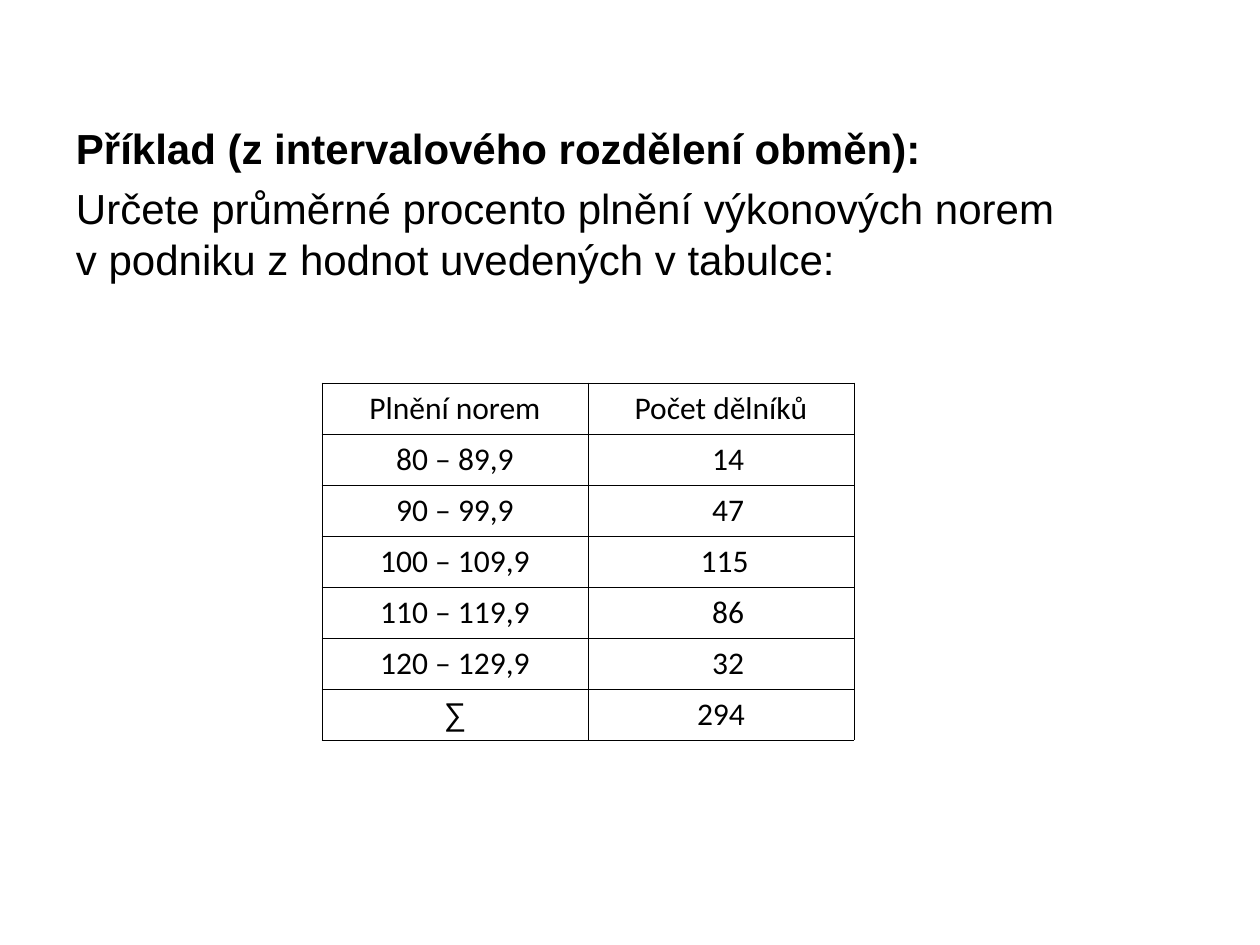
from lxml.etree import SubElement
from pptx import Presentation
from pptx.dml.color import RGBColor
from pptx.enum.text import MSO_ANCHOR, PP_ALIGN
from pptx.oxml.ns import qn
from pptx.util import Pt

# Content
HEADING = "Příklad (z intervalového rozdělení obměn):"
TASK = "Určete průměrné procento plnění výkonových norem\vv podniku z hodnot uvedených v tabulce:"
ROWS = [
    ("Plnění norem", "Počet dělníků"),
    ("80 – 89,9", "14"),
    ("90 – 99,9", "47"),
    ("100 – 109,9", "115"),
    ("110 – 119,9", "86"),
    ("120 – 129,9", "32"),
    ("∑", "294"),
]
COLORS = {"text": "000000", "border": "000000"}

# Geometry in px
SCALE = 914400 / 126
TEXT_BOX = (76, 122, 1108, 170)
TABLE_LEFT, TABLE_TOP, COL_W, ROW_H = 322, 383, 266, 51
DIGIT_SHIFT = 7  # extra left margin per digit missing from a count


def px(n):
    return round(n * SCALE)


def style(font, **values):
    for name, value in values.items():
        setattr(font, name, value)
    font.color.rgb = RGBColor.from_string(COLORS["text"])


def add_borders(cell):
    tc_pr = cell._tc.get_or_add_tcPr()
    for i, side in enumerate(("lnL", "lnR", "lnT", "lnB")):
        ln = SubElement(tc_pr, qn(f"a:{side}"), w=str(Pt(0.5)))
        fill = SubElement(ln, qn("a:solidFill"))
        SubElement(fill, qn("a:srgbClr"), val=COLORS["border"])
        tc_pr.insert(i, ln)


prs = Presentation()
prs.slide_width, prs.slide_height = px(1260), px(945)
s = prs.slides.add_slide(prs.slide_layouts[6])

# Heading and task
tf = s.shapes.add_textbox(*map(px, TEXT_BOX)).text_frame
tf.word_wrap = True
for side in ("left", "right", "top", "bottom"):
    setattr(tf, f"margin_{side}", 0)
for i, (text, bold) in enumerate([(HEADING, True), (TASK, False)]):
    p = tf.add_paragraph() if i else tf.paragraphs[0]
    p.text = text
    p.line_spacing = Pt(29.25)
    p.space_before = Pt(4.8 * i)
    for r in p.runs:
        style(r.font, name="Arial", size=Pt(24), bold=bold)

# Frequency table
n_rows, n_cols = len(ROWS), len(ROWS[0])
table = s.shapes.add_table(n_rows, n_cols, px(TABLE_LEFT), px(TABLE_TOP),
                           px(COL_W * n_cols), px(ROW_H * n_rows)).table
table.first_row = table.horz_banding = False
for col in table.columns:
    col.width = px(COL_W)
for i, row in enumerate(ROWS):
    table.rows[i].height = px(ROW_H)
    for j, text in enumerate(row):
        cell = table.cell(i, j)
        cell.fill.background()
        add_borders(cell)
        if i and not j:
            cell.vertical_anchor = MSO_ANCHOR.MIDDLE
        if j and 0 < i < n_rows - 1:
            cell.margin_left = px(13 + DIGIT_SHIFT * (4 - len(text)))
        p = cell.text_frame.paragraphs[0]
        p.alignment = PP_ALIGN.CENTER
        r = p.add_run()
        r.text = text
        style(r.font, name="Arial" if text == "∑" else "Calibri", size=Pt(18), bold=False)

prs.save("out.pptx")
